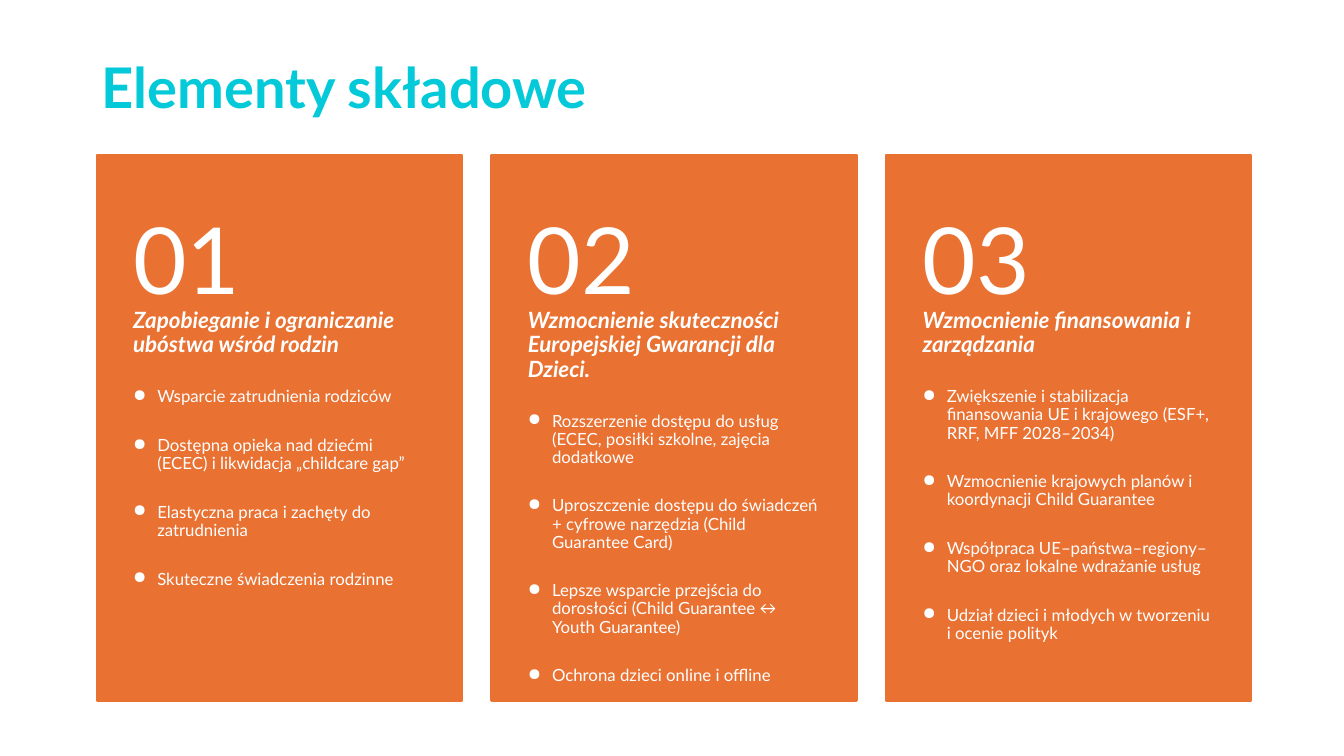
from lxml import etree
from pptx import Presentation
from pptx import util as u
from pptx.dml.color import RGBColor
from pptx.enum import shapes, text
from pptx.oxml.ns import qn

# Content
TITLE = "Elementy składowe"
CARDS = [
    ("Zapobieganie i ograniczanie ubóstwa wśród rodzin", [
        "Wsparcie zatrudnienia rodziców",
        "Dostępna opieka nad dziećmi (ECEC) i likwidacja „childcare gap”",
        "Elastyczna praca i zachęty do zatrudnienia",
        "Skuteczne świadczenia rodzinne",
    ]),
    ("Wzmocnienie skuteczności Europejskiej Gwarancji dla Dzieci.", [
        "Rozszerzenie dostępu do usług (ECEC, posiłki szkolne, zajęcia dodatkowe",
        "Uproszczenie dostępu do świadczeń + cyfrowe narzędzia (Child Guarantee Card)",
        "Lepsze wsparcie przejścia do dorosłości (Child Guarantee ↔ Youth Guarantee)",
        "Ochrona dzieci online i offline",
    ]),
    ("Wzmocnienie finansowania i zarządzania", [
        "Zwiększenie i stabilizacja finansowania UE i krajowego (ESF+, RRF, MFF 2028–2034)",
        "Wzmocnienie krajowych planów i koordynacji Child Guarantee",
        "Współpraca UE–państwa–regiony–NGO oraz lokalne wdrażanie usług",
        "Udział dzieci i młodych w tworzeniu i ocenie polityk",
    ]),
]

THEME = {
    "font": "Lato",
    "title": "03C9D8", "card": "E97132", "text": "FFFFFF",
    "title_size": 40, "num_size": 66, "head_size": 16, "item_size": 12,
}

# Layout, in inches
LEFT, TOP, WIDE, HIGH = 0.96, 1.54, 3.62, 5.41
STEP = 3.915
NUM_HIGH = 2.16
PAD = 0.36
INDENT = 0.24


def rgb(name):
    return RGBColor.from_string(THEME[name])


def frame(shape, pads, anchor):
    body = shape.text_frame
    body.word_wrap = True
    body.vertical_anchor = anchor
    body.margin_left, body.margin_top, body.margin_right, body.margin_bottom = map(u.Inches, pads)
    return body


def write(body, line, size, color="text", bold=False, italic=False,
          before=0, after=0, bullet=False):
    para = body.paragraphs[0]
    if para.runs:
        para = body.add_paragraph()
    para.alignment = text.PP_ALIGN.LEFT
    para.line_spacing = 0.9
    para.space_before, para.space_after = u.Pt(before), u.Pt(after)
    if bullet:
        props = para._p.get_or_add_pPr()
        props.set("marL", str(u.Inches(INDENT)))
        props.set("indent", str(-u.Inches(INDENT)))
        tint = etree.SubElement(props, qn("a:buClr"))
        etree.SubElement(tint, qn("a:srgbClr"), val=THEME[color])
        etree.SubElement(props, qn("a:buChar"), char="●")
    run = para.add_run()
    run.text = line
    font = run.font
    font.name, font.size = THEME["font"], u.Pt(THEME[size])
    font.bold, font.italic = bold, italic
    font.color.rgb = rgb(color)


def add_card(slide, index, head, items):
    left = u.Inches(LEFT + index * STEP)
    top, wide = u.Inches(TOP), u.Inches(WIDE)

    # Panel with heading and bullets
    card = slide.shapes.add_shape(
        shapes.MSO_SHAPE.RECTANGLE, left, top, wide, u.Inches(HIGH))
    card.shadow.inherit = False
    card.fill.solid()
    card.fill.fore_color.rgb = rgb("card")
    card.line.color.rgb = rgb("card")
    card.line.width = u.Pt(1.5)
    body = frame(card, (PAD, 1.53, PAD, PAD), text.MSO_ANCHOR.TOP)
    write(body, head, "head_size", bold=True, italic=True, after=9.9)
    for item in items:
        write(body, item, "item_size", before=11.9, after=9.9, bullet=True)

    # Large number
    box = slide.shapes.add_textbox(left, top, wide, u.Inches(NUM_HIGH))
    body = frame(box, (PAD, PAD / 2, PAD, PAD / 2), text.MSO_ANCHOR.MIDDLE)
    write(body, f"{index + 1:02}", "num_size", after=23.1)


def main():
    deck = Presentation()
    deck.slide_width, deck.slide_height = u.Inches(13.33), u.Inches(7.5)
    slide = deck.slides.add_slide(deck.slide_layouts[6])

    # Title
    box = slide.shapes.add_textbox(*map(u.Inches, (0.91, 0.45, 11.5, 0.89)))
    body = frame(box, (0.1, 0.05, 0.1, 0.05), text.MSO_ANCHOR.MIDDLE)
    write(body, TITLE, "title_size", color="title", bold=True)

    # Cards
    for index, (head, items) in enumerate(CARDS):
        add_card(slide, index, head, items)

    deck.save("out.pptx")


if __name__ == "__main__":
    main()
